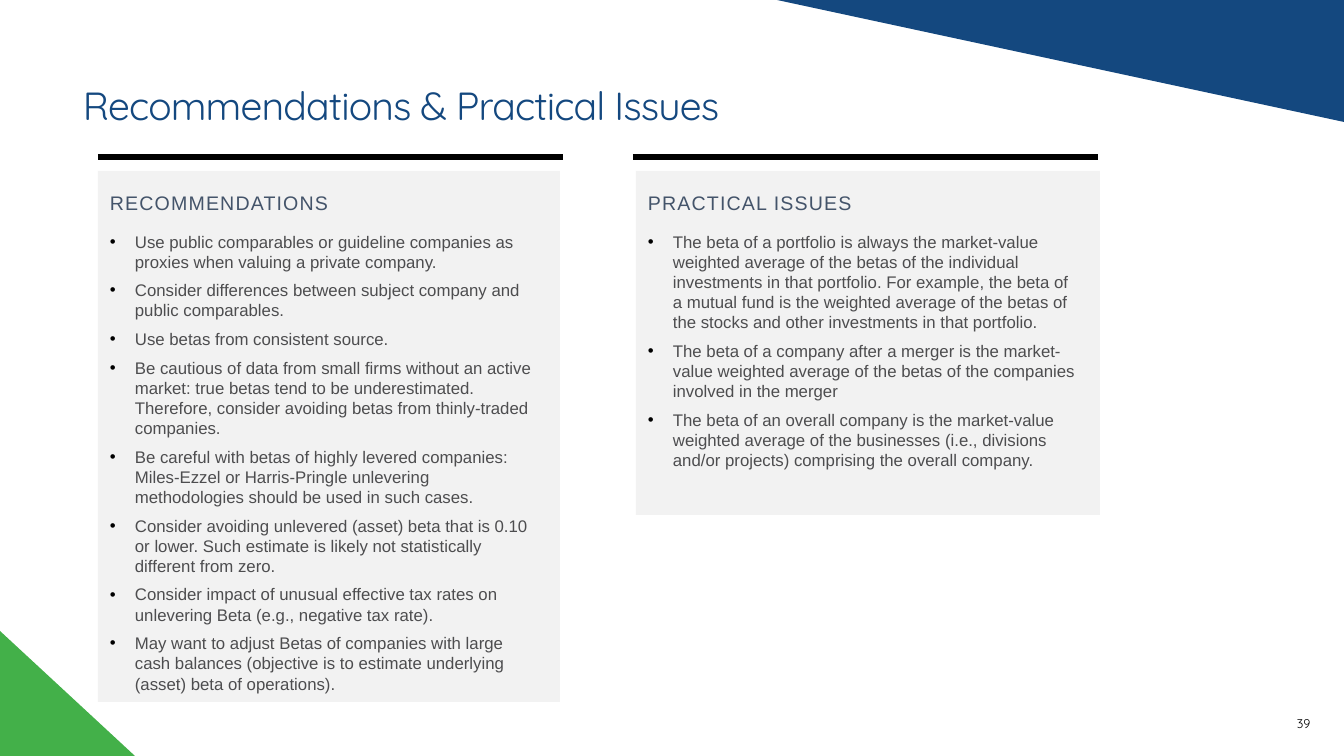
from lxml import etree
from pptx import Presentation
from pptx.dml.color import RGBColor
from pptx.enum.shapes import MSO_CONNECTOR, MSO_SHAPE
from pptx.enum.text import MSO_ANCHOR, PP_ALIGN
from pptx.oxml.ns import qn
from pptx.util import Emu, Pt

STRAIGHT = MSO_CONNECTOR.STRAIGHT
RECTANGLE = MSO_SHAPE.RECTANGLE
TOP, MIDDLE, BOTTOM = MSO_ANCHOR.TOP, MSO_ANCHOR.MIDDLE, MSO_ANCHOR.BOTTOM
LEFT = PP_ALIGN.LEFT

EMU_PER_PX = 914400 / 100.8
SLIDE_W, SLIDE_H = 1344, 756
BULLET_INDENT = 25
RULE_Y, RULE_W = 157, 465
PANEL_TOP = 171

BLUE, GREEN, BLACK = "14487F", "43B049", "000000"
PANEL_GREY, HEADING_SLATE, BODY_GREY = "F2F2F2", "44546A", "4D4D4F"

RECOMMENDATIONS = [
    "Use public comparables or guideline companies as proxies when valuing a private company.",
    "Consider differences between subject company and public comparables.",
    "Use betas from consistent source.",
    "Be cautious of data from small firms without an active market: true betas tend to be "
    "underestimated. Therefore, consider avoiding betas from thinly-traded companies.",
    "Be careful with betas of highly levered companies: Miles-Ezzel or Harris-Pringle "
    "unlevering methodologies should be used in such cases.",
    "Consider avoiding unlevered (asset) beta that is 0.10 or lower. Such estimate is likely "
    "not statistically different from zero.",
    "Consider impact of unusual effective tax rates on unlevering Beta (e.g., negative tax rate).",
    "May want to adjust Betas of companies with large cash balances (objective is to estimate "
    "underlying (asset) beta of operations).",
]
PRACTICAL_ISSUES = [
    "The beta of a portfolio is always the market-value weighted average of the betas of the "
    "individual investments in that portfolio. For example, the beta of a mutual fund is the "
    "weighted average of the betas of the stocks and other investments in that portfolio.",
    "The beta of a company after a merger is the market-value weighted average of the betas "
    "of the companies involved in the merger",
    "The beta of an overall company is the market-value weighted average of the businesses "
    "(i.e., divisions and/or projects) comprising the overall company.",
]


def px(length):
    return Emu(round(length * EMU_PER_PX))


def rgb(hex_color):
    return RGBColor.from_string(hex_color)


def add_bullet(paragraph):
    properties = paragraph._p.get_or_add_pPr()
    properties.set("marL", str(px(BULLET_INDENT)))
    properties.set("indent", str(-px(BULLET_INDENT)))
    bullet_color = etree.SubElement(properties, qn("a:buClr"))
    etree.SubElement(bullet_color, qn("a:srgbClr"), val=BLACK)
    etree.SubElement(properties, qn("a:buFont"), typeface="Arial")
    etree.SubElement(properties, qn("a:buChar"), char="•")


def write(paragraph, text, *, size, color, font="Arial", tracking=0,
          bullet=False, space_before=None, line_spacing=None):
    """Fill a paragraph; tracking is the letter spacing in points."""
    if bullet:
        add_bullet(paragraph)
    paragraph.alignment = LEFT
    if space_before is not None:
        paragraph.space_before = Pt(space_before)
    if line_spacing is not None:
        paragraph.line_spacing = line_spacing
    run = paragraph.add_run()
    run.text = text
    run.font.name = font
    run.font.size = Pt(size)
    run.font.color.rgb = rgb(color)
    if tracking:
        run._r.get_or_add_rPr().set("spc", str(round(tracking * 100)))


def set_frame(frame, anchor, left, top, right, bottom):
    frame.word_wrap = True
    frame.vertical_anchor = anchor
    frame.margin_left, frame.margin_top = px(left), px(top)
    frame.margin_right, frame.margin_bottom = px(right), px(bottom)


def paint(shape, color):
    shape.shadow.inherit = False
    shape.fill.solid()
    shape.fill.fore_color.rgb = rgb(color)
    shape.line.fill.background()


def add_corner(slide, points, color):
    builder = slide.shapes.build_freeform(*points[0], scale=EMU_PER_PX)
    builder.add_line_segments(points[1:], close=True)
    paint(builder.convert_to_shape(), color)


def add_label(slide, text, box, anchor, insets, **text_format):
    label = slide.shapes.add_textbox(*map(px, box))
    set_frame(label.text_frame, anchor, *insets)
    write(label.text_frame.paragraphs[0], text, font="Quicksand", **text_format)


def add_rule(slide, left):
    rule = slide.shapes.add_connector(
        STRAIGHT, px(left), px(RULE_Y), px(left + RULE_W), px(RULE_Y))
    rule.line.color.rgb = rgb(BLACK)
    rule.line.width = Pt(4.5)
    etree.SubElement(rule._element.spPr, qn("a:effectLst"))


def add_panel(slide, heading, points, left, width, height):
    panel = slide.shapes.add_shape(
        RECTANGLE, px(left), px(PANEL_TOP), px(width), px(height))
    paint(panel, PANEL_GREY)
    frame = panel.text_frame
    set_frame(frame, TOP, 12, 20, 20, 20)
    write(frame.paragraphs[0], heading, size=14, color=HEADING_SLATE, tracking=0.8)
    for index, point in enumerate(points):
        write(frame.add_paragraph(), point, size=12, color=BODY_GREY,
              bullet=True, space_before=6 if index else 12)


def main():
    deck = Presentation()
    deck.slide_width, deck.slide_height = px(SLIDE_W), px(SLIDE_H)
    slide = deck.slides.add_slide(deck.slide_layouts[6])

    add_corner(slide, [(777, 0), (SLIDE_W, 122), (SLIDE_W, 0)], BLUE)
    add_corner(slide, [(0, 631), (135, SLIDE_H), (0, SLIDE_H)], GREEN)
    add_label(slide, "39", (1297, 712, 47, 19), BOTTOM, (0, 0, 0, 0),
              size=9, color=BLACK)
    add_label(slide, "Recommendations & Practical Issues", (83, 66, 845, 72),
              MIDDLE, (0, 5, 10, 5), size=28, color=BLUE, tracking=-0.6,
              line_spacing=1.13)

    add_panel(slide, "RECOMMENDATIONS", RECOMMENDATIONS, 98, 462, 531)
    add_rule(slide, 98)
    add_panel(slide, "PRACTICAL ISSUES", PRACTICAL_ISSUES, 636, 464, 344)
    add_rule(slide, 633)

    deck.save("out.pptx")


if __name__ == "__main__":
    main()
